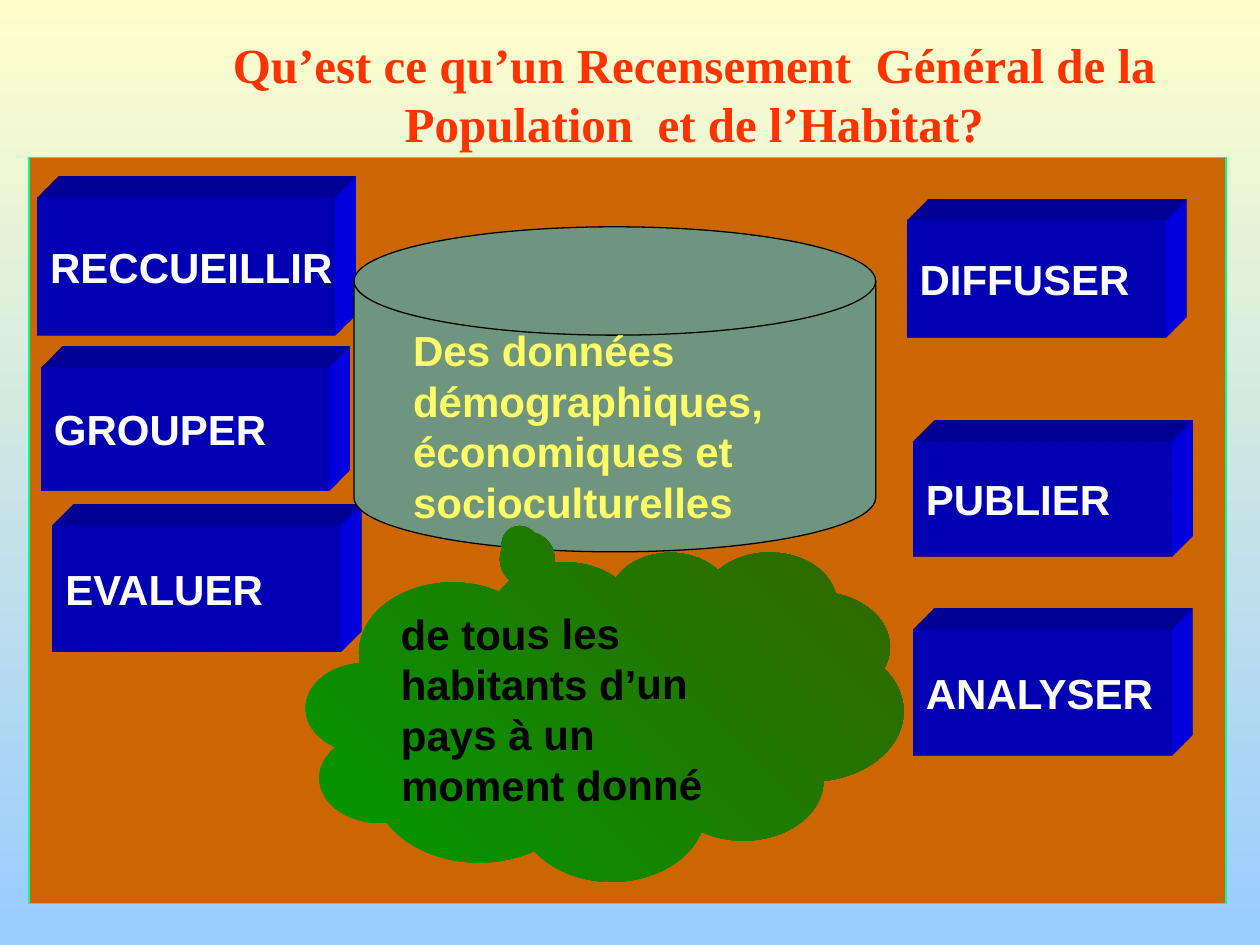
"""Build the slide that explains what a population census is."""
from lxml import etree
from pptx import Presentation, util as u
from pptx.dml.color import RGBColor
from pptx.enum import shapes, text

PX = 9144
NS = "http://schemas.openxmlformats.org/drawingml/2006/main"
KIND = shapes.MSO_SHAPE

TITLE = "Qu’est ce qu’un Recensement  Général de la Population  et de l’Habitat?"
DATA = ["Des données démographiques,", "économiques et socioculturelles"]
PEOPLE = ["de tous les habitants d’un pays à un moment donné"]
LEFT = [
    ("RECCUEILLIR", (30, 157, 236, 109)),
    ("GROUPER", (33, 292, 228, 97)),
    ("EVALUER", (42, 417, 228, 100)),
]
RIGHT = [
    ("PUBLIER", (725, 350, 205, 92)),
    ("DIFFUSER", (720, 175, 205, 93)),
    ("ANALYSER", (725, 500, 205, 100)),
]
DEPTH = f"""<r xmlns:a="{NS}"><a:scene3d>
<a:camera prst="legacyObliqueTopRight"/><a:lightRig rig="legacyFlat3" dir="b"/></a:scene3d>
<a:sp3d extrusionH="430200" prstMaterial="legacyMatte">
<a:bevelT w="13500" h="13500" prst="angle"/><a:bevelB w="13500" h="13500" prst="angle"/>
<a:extrusionClr><a:srgbClr val="0000FF"/></a:extrusionClr></a:sp3d></r>"""


def tint(code):
    return RGBColor.from_string(code)


def place(box):
    return [u.Emu(n * PX) for n in box]


def blend(fill, ends, angle):
    fill.gradient()
    fill.gradient_angle = angle
    for stop, code in zip(fill.gradient_stops, ends):
        stop.color.rgb = tint(code)


def write(item, lines, size=24, face="Arial", color="FFFFFF", align="LEFT",
          anchor="MIDDLE", wrap=True):
    frame = item.text_frame
    frame.word_wrap = wrap
    frame.vertical_anchor = text.MSO_ANCHOR[anchor]
    frame.text = "\n".join(lines)
    for para in frame.paragraphs:
        para.alignment = text.PP_ALIGN[align]
        for run in para.runs:
            font = run.font
            font.size, font.name, font.bold = u.Pt(size), face, True
            font.color.rgb = tint(color)


def draw(home, kind, box, fill=None, line=None):
    item = home.add_shape(kind, *place(box))
    item.shadow.inherit = False
    if fill:
        item.fill.solid()
        item.fill.fore_color.rgb = tint(fill)
    if line:
        item.line.color.rgb = tint(line)
        item.line.width = u.Pt(0.75)
    else:
        item.line.fill.background()
    return item


def block(home, word, box):
    item = draw(home, KIND.RECTANGLE, box, "0000FF")
    write(item, [word], wrap=False)
    for part in list(etree.fromstring(DEPTH)):
        item.element.spPr.append(part)


def main():
    deck = Presentation()
    deck.slide_width, deck.slide_height = place((1000, 750))
    slide = deck.slides.add_slide(deck.slide_layouts[5])
    blend(slide.background.fill, ("FFFFCC", "99CCFF"), 270)
    home = slide.shapes

    head = home.title
    head.left, head.top, head.width, head.height = place((125, 23, 852, 102))
    write(head, [TITLE], size=28, face="Times New Roman", color="FF3300", align="CENTER")

    draw(home, KIND.RECTANGLE, (23, 125, 950, 592), "CC6600", "00FF99")
    for word, box in LEFT:
        block(home, word, box)

    group = home.add_group_shape().shapes
    draw(group, KIND.FLOWCHART_MAGNETIC_DISK, (281, 180, 414, 258), "70957E", "000000")
    label = group.add_textbox(*place((318, 253, 348, 172)))
    write(label, DATA, color="FFFF66", anchor="TOP")

    cloud = draw(home, KIND.CLOUD_CALLOUT, (243, 438, 474, 261))
    cloud.rotation = 359.8
    cloud.adjustments[0], cloud.adjustments[1] = -0.14, -0.52
    blend(cloud.fill, ("009900", "336600"), 45)
    write(cloud, PEOPLE, color="000000", anchor="TOP")

    for word, box in RIGHT:
        block(home, word, box)
    deck.save("out.pptx")


if __name__ == "__main__":
    main()
